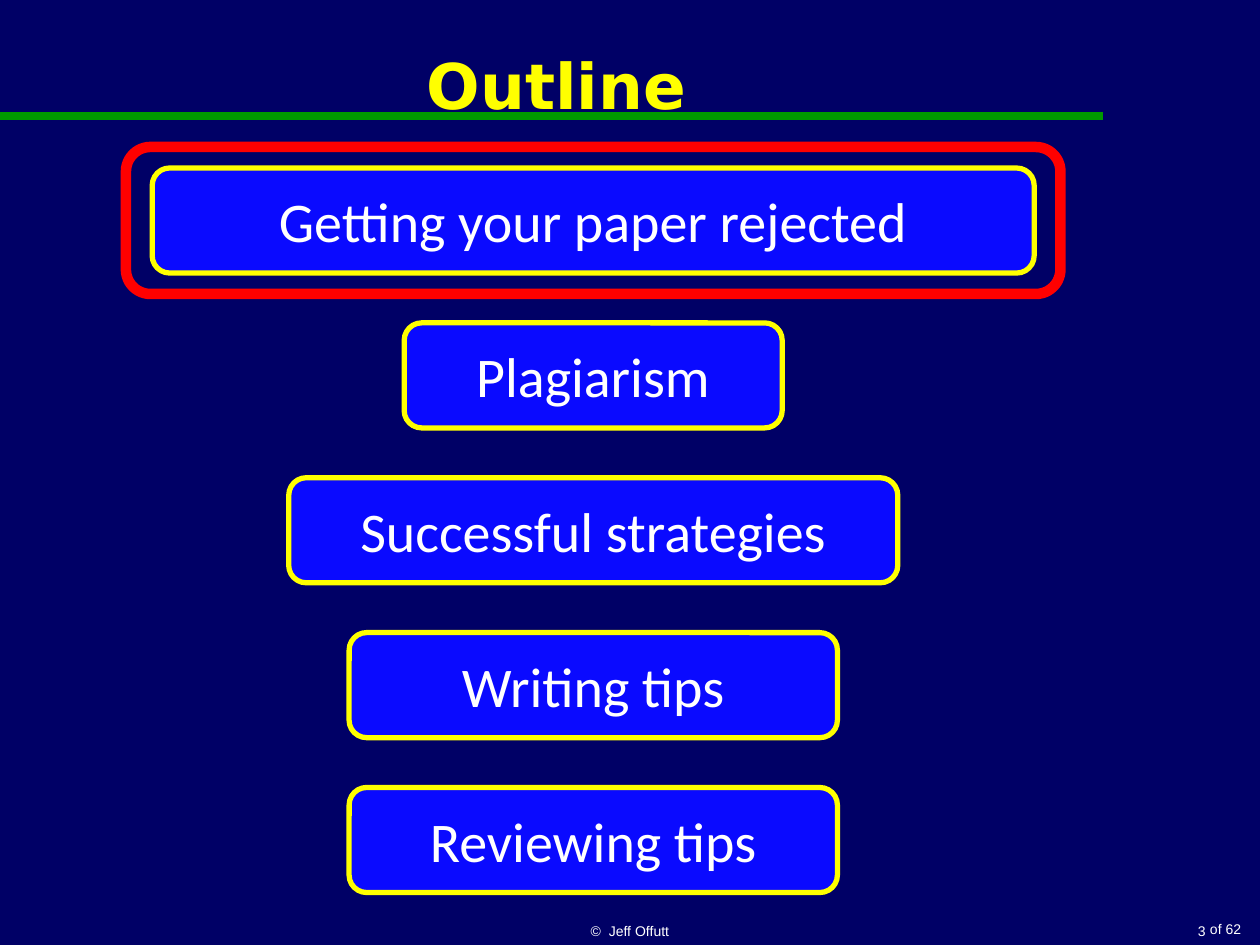
from dataclasses import dataclass

from lxml.etree import SubElement
from pptx import Presentation
from pptx.dml.color import RGBColor as Color
from pptx.enum.shapes import MSO_CONNECTOR as Connector, MSO_SHAPE as Shape
from pptx.enum.text import MSO_ANCHOR as Anchor, PP_ALIGN as Align
from pptx.oxml.ns import qn
from pptx.util import Pt


@dataclass(frozen=True)
class Theme:
    navy: Color = Color(0x00, 0x00, 0x66)
    blue: Color = Color(0x0A, 0x0A, 0xFF)
    yellow: Color = Color(0xFF, 0xFF, 0x00)
    green: Color = Color(0x00, 0x99, 0x00)
    red: Color = Color(0xFF, 0x00, 0x00)
    white: Color = Color(0xFF, 0xFF, 0xFF)
    title_font: str = "DejaVu Sans"
    topic_font: str = "Calibri"
    footer_font: str = "Arial"
    title_size: int = 36
    topic_size: int = 32
    footer_size: int = 8


THEME = Theme()

# Topic and box width, from top to bottom
TOPICS = [
    ("Getting your paper rejected", 504),
    ("Plagiarism", 216),
    ("Successful strategies", 348),
    ("Writing tips", 279),
    ("Reviewing tips", 279),
]
CURRENT_TOPIC = 0


def write(shape, text, font, size, color, align, anchor, bold=False, wrap=True):
    frame = shape.text_frame
    frame.word_wrap = wrap
    frame.vertical_anchor = anchor
    para = frame.paragraphs[0]
    para.text = text
    para.alignment = align
    span = para.runs[0].font
    span.name, span.size, span.bold = font, Pt(size), bold
    span.color.rgb = color


def add_text(page, box, *style, **options):
    write(page.shapes.add_textbox(*map(Pt, box)), *style, **options)


def add_round_box(page, box, line_color, line_width, fill_color=None):
    shape = page.shapes.add_shape(Shape.ROUNDED_RECTANGLE, *map(Pt, box))
    shape.shadow.inherit = False
    if fill_color is None:
        shape.fill.background()
    else:
        shape.fill.solid()
        shape.fill.fore_color.rgb = fill_color
    shape.line.color.rgb = line_color
    shape.line.width = Pt(line_width)
    return shape


def add_header(page, box):
    left, top, width, height = box
    # Rule under the title, from the slide edge
    rule_y = top + 66.25
    rule = page.shapes.add_connector(
        Connector.STRAIGHT, Pt(0), Pt(rule_y), Pt(left + width), Pt(rule_y))
    rule.line.color.rgb = THEME.green
    rule.line.width = Pt(4.5)
    SubElement(rule.element.spPr, qn("a:effectLst"))
    # Title
    add_text(page, box, "Outline", THEME.title_font, THEME.title_size,
             THEME.yellow, Align.CENTER, Anchor.MIDDLE, bold=True)


def add_topics(page, box):
    left, top, width, height = box
    topic_height, margin_x, margin_y = 60, 15, 12
    pitch = (height - topic_height) / (len(TOPICS) - 1)
    for index, (topic, topic_width) in enumerate(TOPICS):
        x = left + (width - topic_width) / 2
        y = top + index * pitch
        shape = add_round_box(page, (x, y, topic_width, topic_height),
                              THEME.yellow, 3, THEME.blue)
        write(shape, topic, THEME.topic_font, THEME.topic_size, THEME.white,
              Align.CENTER, Anchor.MIDDLE)
        # Frame around the current topic
        if index == CURRENT_TOPIC:
            add_round_box(page, (x - margin_x, y - margin_y,
                                 topic_width + 2 * margin_x,
                                 topic_height + 2 * margin_y), THEME.red, 6)


def add_footer(page, box):
    left, top, width, height = box
    style = THEME.footer_font, THEME.footer_size, THEME.white
    add_text(page, (left + 246, top, 228, height), "©  Jeff Offutt",
             *style, Align.CENTER, Anchor.BOTTOM)
    # Page number and page count
    add_text(page, (left + 570, top, 126, height), "3",
             *style, Align.RIGHT, Anchor.BOTTOM)
    add_text(page, (left + 684, top + 6.5, 32.4, 17), "of 62",
             *style, Align.RIGHT, Anchor.TOP, wrap=False)


def main():
    deck = Presentation()
    deck.slide_width, deck.slide_height = Pt(720), Pt(540)
    page = deck.slides.add_slide(deck.slide_layouts[6])
    page.background.fill.solid()
    page.background.fill.fore_color.rgb = THEME.navy
    add_header(page, (6, 0, 624, 96))
    add_topics(page, (87, 96, 504, 414))
    add_footer(page, (0, 516, 720, 24))
    deck.save("out.pptx")


if __name__ == "__main__":
    main()
